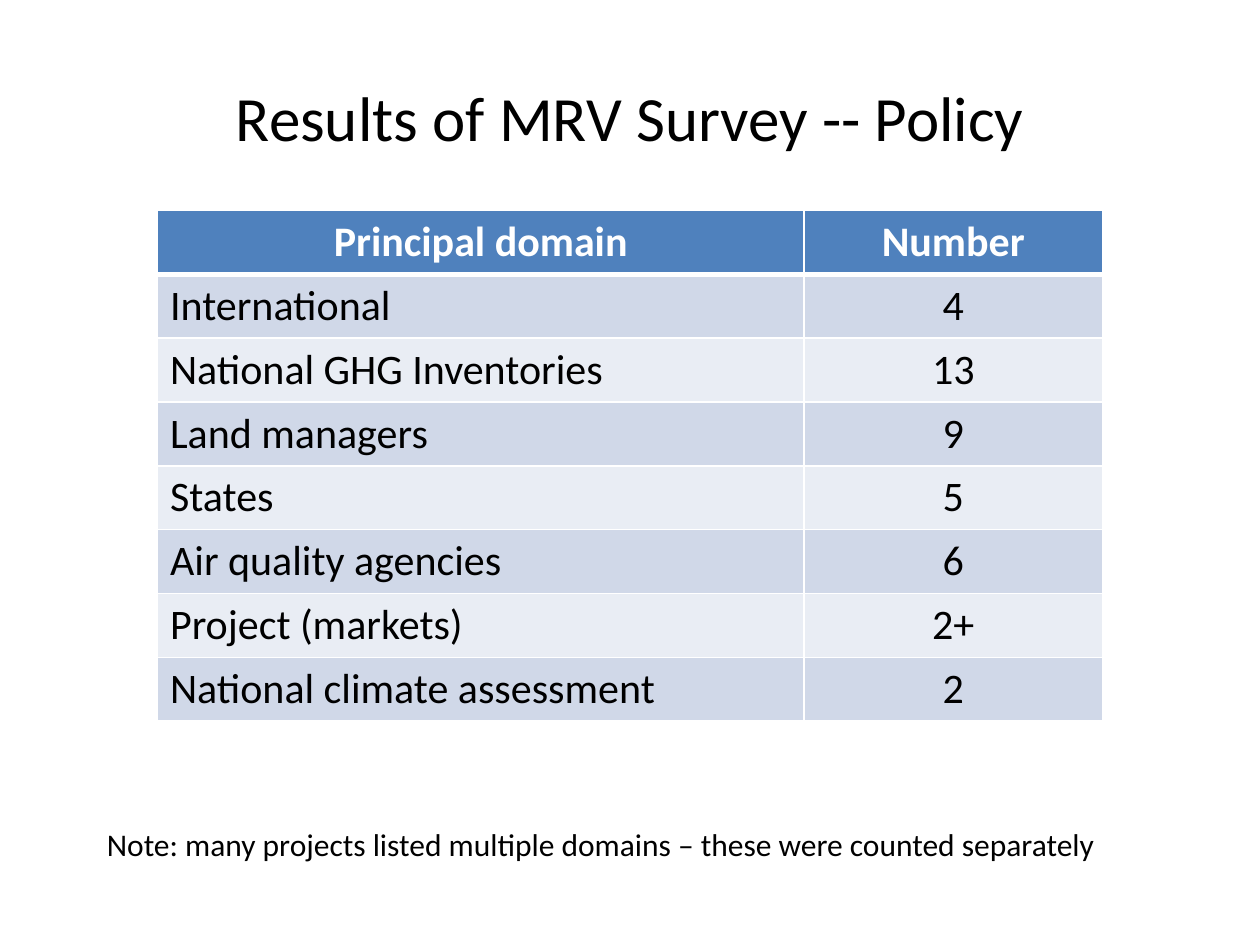
from lxml import etree
from pptx import Presentation
from pptx.dml.color import RGBColor
from pptx.enum.text import MSO_ANCHOR, PP_ALIGN
from pptx.oxml.ns import qn
from pptx.util import Pt

LEFT, CENTER = PP_ALIGN.LEFT, PP_ALIGN.CENTER
MIDDLE, TOP = MSO_ANCHOR.MIDDLE, MSO_ANCHOR.TOP
BLACK = RGBColor(0x00, 0x00, 0x00)
WHITE = RGBColor(0xFF, 0xFF, 0xFF)
HEADER_BLUE = RGBColor(0x4F, 0x81, 0xBD)
BANDS = [RGBColor(0xD0, 0xD8, 0xE8), RGBColor(0xE9, 0xED, 0xF4)]

ROWS = [
    ("Principal domain", "Number"),
    ("International", "4"),
    ("National GHG Inventories", "13"),
    ("Land managers", "9"),
    ("States", "5"),
    ("Air quality agencies", "6"),
    ("Project (markets)", "2+"),
    ("National climate assessment", "2"),
]
COLUMN_WIDTHS = [369.5, 170.5]
ROW_HEIGHT = 36.5


def write(text_frame, text, size, alignment, color=BLACK, bold=False):
    paragraph = text_frame.paragraphs[0]
    paragraph.text = text
    paragraph.alignment = alignment
    paragraph.font.name = "Calibri"
    paragraph.font.size = Pt(size)
    paragraph.font.bold = bold
    paragraph.font.color.rgb = color


def set_border(cell, side, width):
    properties = cell._tc.get_or_add_tcPr()
    line = etree.SubElement(properties, qn(f"a:ln{side}"), w=str(Pt(width)))
    fill = etree.SubElement(line, qn("a:solidFill"))
    etree.SubElement(fill, qn("a:srgbClr"), val=str(WHITE))


presentation = Presentation()
presentation.slide_width = Pt(720)
presentation.slide_height = Pt(540)
slide = presentation.slides.add_slide(presentation.slide_layouts[6])

# Title and note
for text, left, top, width, height, size, alignment, anchor in [
    ("Results of MRV Survey -- Policy", 36, 21.6, 648, 90, 36, CENTER, MIDDLE),
    ("Note: many projects listed multiple domains – these were counted separately",
     54, 468, 624, 29, 18, LEFT, TOP),
]:
    text_box = slide.shapes.add_textbox(Pt(left), Pt(top), Pt(width), Pt(height))
    text_box.text_frame.word_wrap = True
    text_box.text_frame.vertical_anchor = anchor
    write(text_box.text_frame, text, size, alignment)

# Survey table
table = slide.shapes.add_table(
    len(ROWS), len(COLUMN_WIDTHS), Pt(90), Pt(120.25),
    Pt(sum(COLUMN_WIDTHS)), Pt(ROW_HEIGHT * len(ROWS))).table
for column, width in zip(table.columns, COLUMN_WIDTHS):
    column.width = Pt(width)

for row_index, values in enumerate(ROWS):
    table.rows[row_index].height = Pt(ROW_HEIGHT)
    header = row_index == 0
    for column_index, value in enumerate(values):
        cell = table.cell(row_index, column_index)
        write(cell.text_frame, value, 24,
              CENTER if header or column_index == 1 else LEFT,
              WHITE if header else BLACK, header)
        # White rules, heavier around the header's lower edge
        for side in "LRTB":
            heavy = (row_index, side) in [(0, "B"), (1, "T")]
            set_border(cell, side, 3 if heavy else 1)
        cell.fill.solid()
        cell.fill.fore_color.rgb = HEADER_BLUE if header else BANDS[(row_index - 1) % 2]

presentation.save("out.pptx")
